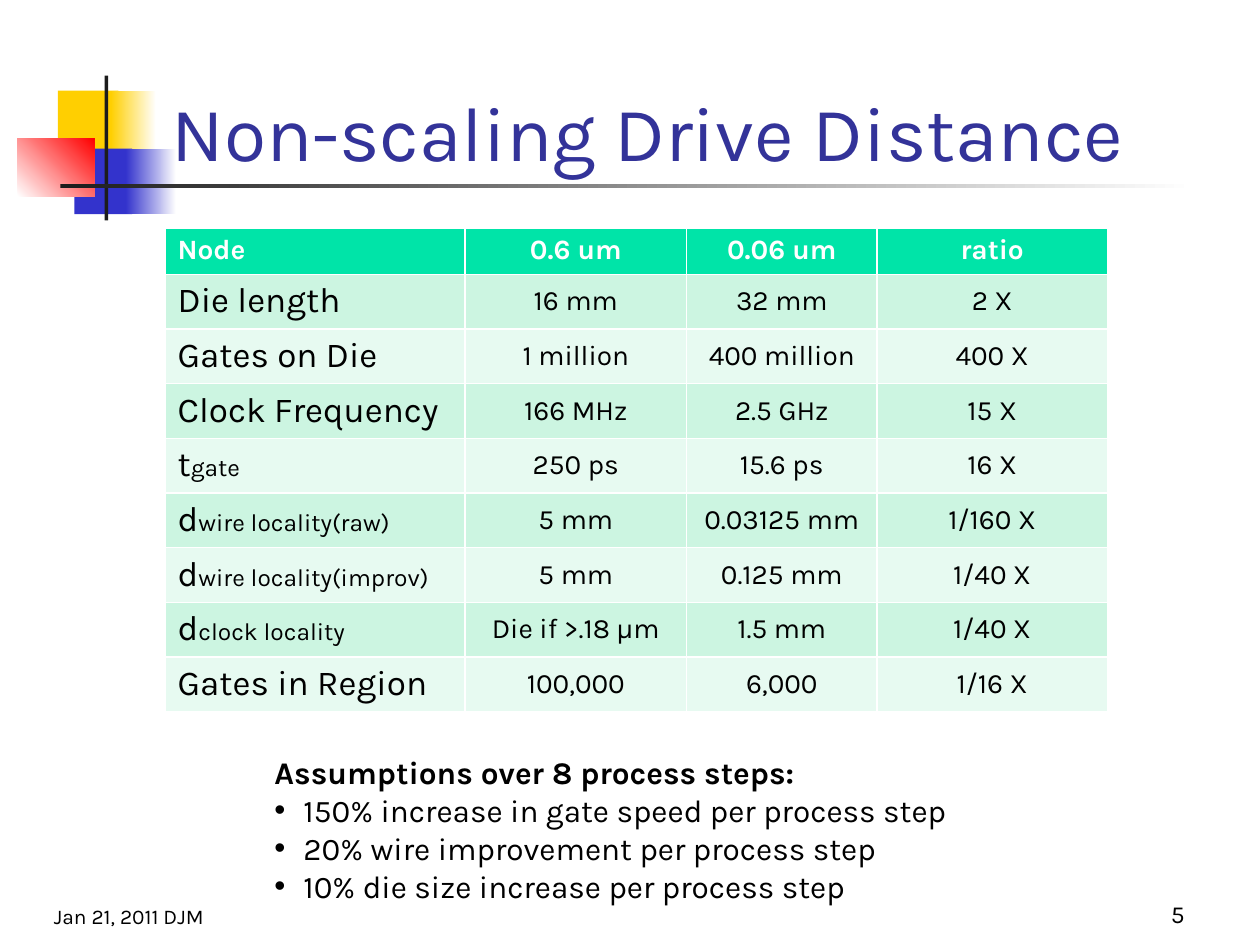
from pptx import Presentation
from pptx.dml.color import RGBColor
from pptx.enum.shapes import MSO_SHAPE
from pptx.enum.text import MSO_ANCHOR, PP_ALIGN
from pptx.oxml.ns import qn
from pptx.util import Inches, Pt

RECTANGLE = MSO_SHAPE.RECTANGLE
LEFT, CENTER, RIGHT = PP_ALIGN.LEFT, PP_ALIGN.CENTER, PP_ALIGN.RIGHT
TOP, MIDDLE, BOTTOM = MSO_ANCHOR.TOP, MSO_ANCHOR.MIDDLE, MSO_ANCHOR.BOTTOM

FONT = "Karla"
WHITE = RGBColor(0xFF, 0xFF, 0xFF)
BLACK = RGBColor(0x00, 0x00, 0x00)
CHARCOAL = RGBColor(0x1C, 0x1C, 0x1C)
YELLOW = RGBColor(0xFF, 0xCF, 0x01)
BLUE = RGBColor(0x33, 0x33, 0xCC)
RED = RGBColor(0xFF, 0x00, 0x00)
NAVY = RGBColor(0x33, 0x33, 0x99)
HEADER_GREEN = RGBColor(0x00, 0xE4, 0xA8)
BAND_GREENS = (RGBColor(0xCC, 0xF5, 0xE1), RGBColor(0xE7, 0xFA, 0xF1))

MOTIF = [
    ((0.32, 0.12, 0.48, 0.52), YELLOW, None, 0),
    ((0.74, 0.12, 0.36, 0.52), YELLOW, WHITE, 0),
    ((0.45, 0.58, 0.46, 0.52), BLUE, None, 0),
    ((0.86, 0.58, 0.4, 0.52), BLUE, WHITE, 0),
    ((0, 0.5, 0.61, 0.46), WHITE, RED, 45),
    ((0.69, 0, 0.03, 1.15), CHARCOAL, None, 0),
    ((0.34, 0.86, 9, 0.03), CHARCOAL, WHITE, 0),
]

COLUMN_WIDTHS = (2.38, 1.76, 1.51, 1.83)
HEADER_HEIGHT, ROW_HEIGHT = 0.35, 0.41
HEADERS = ("Node", "0.6 um", "0.06 um", "ratio")
ROWS = [
    (("Die length", ""), "16 mm", "32 mm", "2 X"),
    (("Gates on Die", ""), "1 million", "400 million", "400 X"),
    (("Clock Frequency", ""), "166 MHz", "2.5 GHz", "15 X"),
    (("t", "gate"), "250 ps", "15.6 ps", "16 X"),
    (("d", "wire locality(raw)"), "5 mm", "0.03125 mm", "1/160 X"),
    (("d", "wire locality(improv)"), "5 mm", "0.125 mm", "1/40 X"),
    (("d", "clock locality"), "Die if >.18 µm", "1.5 mm", "1/40 X"),
    (("Gates in Region", ""), "100,000", "6,000", "1/16 X"),
]

ASSUMPTIONS_HEADING = "Assumptions over 8 process steps:"
ASSUMPTIONS = [
    "150% increase in gate speed per process step",
    "20% wire improvement per process step",
    "10% die size increase per process step",
]


def add_run(paragraph, text, size, color=BLACK, bold=False):
    """Append one formatted run to a paragraph."""
    run = paragraph.add_run()
    run.text = text
    run.font.name = FONT
    run.font.size = Pt(size)
    run.font.bold = bold
    run.font.color.rgb = color


def add_text_box(slide, box, anchor):
    """Add a wrapping text box and return its text frame."""
    frame = slide.shapes.add_textbox(*map(Inches, box)).text_frame
    frame.word_wrap = True
    frame.vertical_anchor = anchor
    return frame


def add_motif(slide, left, top):
    """Draw the coloured squares and crossing bars from a corner point."""
    for (x, y, width, height), start, end, angle in MOTIF:
        shape = slide.shapes.add_shape(
            RECTANGLE, Inches(left + x), Inches(top + y), Inches(width), Inches(height))
        shape.shadow.inherit = False
        shape.line.fill.background()
        if end is None:
            shape.fill.solid()
            shape.fill.fore_color.rgb = start
        else:
            shape.fill.gradient()
            shape.fill.gradient_angle = angle
            for stop, color, position in zip(shape.fill.gradient_stops, (start, end), (0, 1)):
                stop.color.rgb = color
                stop.position = position


def fill_title(slide, box, text):
    """Place and format the title placeholder."""
    title = slide.shapes.title
    title.left, title.top, title.width, title.height = map(Inches, box)
    frame = title.text_frame
    frame.word_wrap = True
    frame.vertical_anchor = BOTTOM
    paragraph = frame.paragraphs[0]
    paragraph.alignment = LEFT
    paragraph.line_spacing = 0.75
    add_run(paragraph, text, 44, NAVY)


def format_cell(cell, color, alignment, anchor):
    """Fill a cell and return its aligned paragraph."""
    cell.fill.solid()
    cell.fill.fore_color.rgb = color
    cell.vertical_anchor = anchor
    paragraph = cell.text_frame.paragraphs[0]
    paragraph.alignment = alignment
    return paragraph


def add_scaling_table(slide, left, top):
    """Add the table that compares the two process nodes."""
    height = HEADER_HEIGHT + ROW_HEIGHT * len(ROWS)
    table = slide.shapes.add_table(
        len(ROWS) + 1, len(HEADERS), Inches(left), Inches(top),
        Inches(sum(COLUMN_WIDTHS)), Inches(height)).table
    for column, width in zip(table.columns, COLUMN_WIDTHS):
        column.width = Inches(width)
    for index, row in enumerate(table.rows):
        row.height = Inches(ROW_HEIGHT if index else HEADER_HEIGHT)
    for column, text in enumerate(HEADERS):
        alignment = CENTER if column else LEFT
        paragraph = format_cell(table.cell(0, column), HEADER_GREEN, alignment, TOP)
        add_run(paragraph, text, 16, WHITE, True)
    for row, ((name, suffix), *values) in enumerate(ROWS, 1):
        color = BAND_GREENS[(row - 1) % 2]
        paragraph = format_cell(table.cell(row, 0), color, LEFT, TOP)
        add_run(paragraph, name, 20)
        if suffix:
            add_run(paragraph, suffix, 14)
        for column, value in enumerate(values, 1):
            paragraph = format_cell(table.cell(row, column), color, CENTER, MIDDLE)
            add_run(paragraph, value, 16)


def add_assumptions(slide, box):
    """Add the heading and bulleted list of assumptions."""
    frame = add_text_box(slide, box, TOP)
    add_run(frame.paragraphs[0], ASSUMPTIONS_HEADING, 18, bold=True)
    for text in ASSUMPTIONS:
        paragraph = frame.add_paragraph()
        properties = paragraph._p.get_or_add_pPr()
        properties.set("marL", str(Inches(0.23)))
        properties.set("indent", str(-Inches(0.23)))
        font = properties.makeelement(qn("a:buFont"), {"typeface": "Arial"})
        bullet = properties.makeelement(qn("a:buChar"), {"char": "•"})
        properties.extend([font, bullet])
        add_run(paragraph, text, 18)


def add_footer_text(slide, box, text, size, alignment):
    """Add one line of footer text at the bottom of its box."""
    paragraph = add_text_box(slide, box, BOTTOM).paragraphs[0]
    paragraph.alignment = alignment
    add_run(paragraph, text, size)


def main():
    """Build and save the slide."""
    presentation = Presentation()
    presentation.slide_width = Inches(10)
    presentation.slide_height = Inches(7.5)
    slide = presentation.slides.add_slide(presentation.slide_layouts[5])
    add_motif(slide, 0.14, 0.6)
    fill_title(slide, (1.26, 0.19, 8.52, 1.25), "Non-scaling Drive Distance")
    add_footer_text(slide, (0.33, 6.92, 2.08, 0.5), "Jan 21, 2011 DJM", 12, LEFT)
    add_footer_text(slide, (7.42, 6.92, 2.08, 0.5), "5", 14, RIGHT)
    add_scaling_table(slide, 1.31, 1.81)
    add_assumptions(slide, (2.08, 5.93, 6.39, 1.31))
    presentation.save("out.pptx")


if __name__ == "__main__":
    main()
